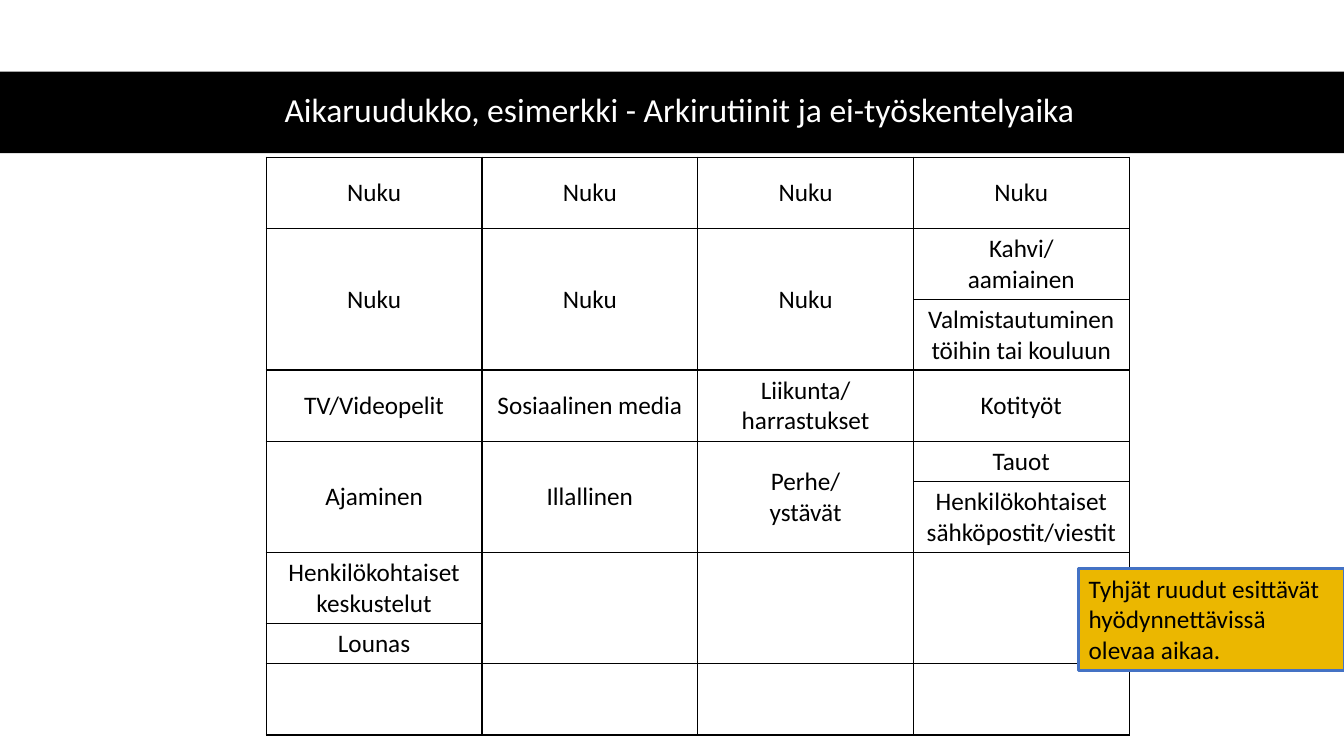
from lxml import etree
from pptx import Presentation
from pptx.dml.color import RGBColor
from pptx.enum.shapes import MSO_SHAPE
from pptx.enum.text import MSO_ANCHOR, MSO_AUTO_SIZE, PP_ALIGN
from pptx.oxml.ns import qn
from pptx.util import Emu, Pt

PX = 9144  # 100 px to the inch
RECT = MSO_SHAPE.RECTANGLE
MIDDLE, TOP = MSO_ANCHOR.MIDDLE, MSO_ANCHOR.TOP
CENTER, LEFT = PP_ALIGN.CENTER, PP_ALIGN.LEFT
GROW = MSO_AUTO_SIZE.SHAPE_TO_FIT_TEXT

BLACK = RGBColor(0x00, 0x00, 0x00)
WHITE = RGBColor(0xFF, 0xFF, 0xFF)
GOLD = RGBColor(0xEB, 0xB7, 0x00)
BLUE = RGBColor(0x44, 0x72, 0xC4)

TITLE = "Aikaruudukko, esimerkki - Arkirutiinit ja ei-työskentelyaika"
NOTE = "Tyhjät ruudut esittävät hyödynnettävissä olevaa aikaa."
COL = 214
HEIGHTS = [71, 65, 65, 71, 37, 65, 65, 37, 71]
ROWS = [
    ["Nuku"] * 4,
    ["Nuku", "Nuku", "Nuku", "Kahvi/\vaamiainen"],
    ["", "", "", "Valmistautuminen töihin tai kouluun"],
    ["TV/Videopelit", "Sosiaalinen media", "Liikunta/harrastukset", "Kotityöt"],
    ["Ajaminen", "Illallinen", "Perhe/\vystävät", "Tauot"],
    ["", "", "", "Henkilökohtaiset sähköpostit/viestit"],
    ["Henkilökohtaiset keskustelut", "", "", ""],
    ["Lounas", "", "", ""],
    [""] * 4,
]
# Top row of each two-row merge, with its columns
MERGES = {1: (0, 1, 2), 4: (0, 1, 2), 6: (1, 2, 3)}


def px(*vals):
    return [Emu(val * PX) for val in vals]


def add_line(props, tag, width, spot):
    """Put a solid black line element into props at the given index."""
    line = etree.Element(qn(tag), w=str(Pt(width)))
    fill = etree.SubElement(line, qn("a:solidFill"))
    etree.SubElement(fill, qn("a:srgbClr"), val=str(BLACK))
    props.insert(spot, line)


def write(frame, text, size=18, color=BLACK, align=CENTER, anchor=MIDDLE):
    frame.word_wrap = True
    frame.vertical_anchor = anchor
    para = frame.paragraphs[0]
    para.text = text
    para.alignment = align
    for run in para.runs:
        for name, val in {"name": "Calibri", "size": Pt(size)}.items():
            setattr(run.font, name, val)
        run.font.color.rgb = color
    return para


def add_box(slide, place, fill, edge=None):
    box = slide.shapes.add_shape(RECT, *px(*place))
    box.shadow.inherit = False
    box.fill.solid()
    box.fill.fore_color.rgb = fill
    if edge is None:
        box.line.fill.background()
    else:
        box.line.color.rgb = edge
        box.line.width = Pt(2.25)
    return box


def add_title(slide):
    box = slide.shapes.add_textbox(*px(61, 70, 1226, 81))
    para = write(box.text_frame, TITLE, 24, WHITE)
    para.line_spacing = 0.9


def fill_cell(cell, text):
    write(cell.text_frame, text)
    cell.vertical_anchor = MIDDLE
    cell.fill.background()
    props = cell._tc.get_or_add_tcPr()
    for spot, side in enumerate("LRTB"):
        add_line(props, f"a:ln{side}", 1, spot)


def add_grid(slide):
    place = px(264, 156, 4 * COL, sum(HEIGHTS))
    table = slide.shapes.add_table(len(ROWS), 4, *place).table
    table.first_row = table.horz_banding = False
    for col in table.columns:
        col.width = Emu(COL * PX)
    for r, (tall, texts) in enumerate(zip(HEIGHTS, ROWS)):
        table.rows[r].height = Emu(tall * PX)
        for c, text in enumerate(texts):
            fill_cell(table.cell(r, c), text)
    for r, cols in MERGES.items():
        for c in cols:
            table.cell(r, c).merge(table.cell(r + 1, c))


def add_note(slide):
    box = add_box(slide, (1070, 564, 264, 101), GOLD, BLUE)
    para = write(box.text_frame, NOTE, align=LEFT, anchor=TOP)
    box.text_frame.auto_size = GROW
    for run in para.runs:
        add_line(run.font._element, "a:ln", 0.75, 0)


def main():
    deck = Presentation()
    deck.slide_width, deck.slide_height = px(1333, 750)
    slide = deck.slides.add_slide(deck.slide_layouts[6])
    add_box(slide, (0, 71, 1333, 81), BLACK)
    add_title(slide)
    add_grid(slide)
    add_note(slide)
    deck.save("out.pptx")


if __name__ == "__main__":
    main()
